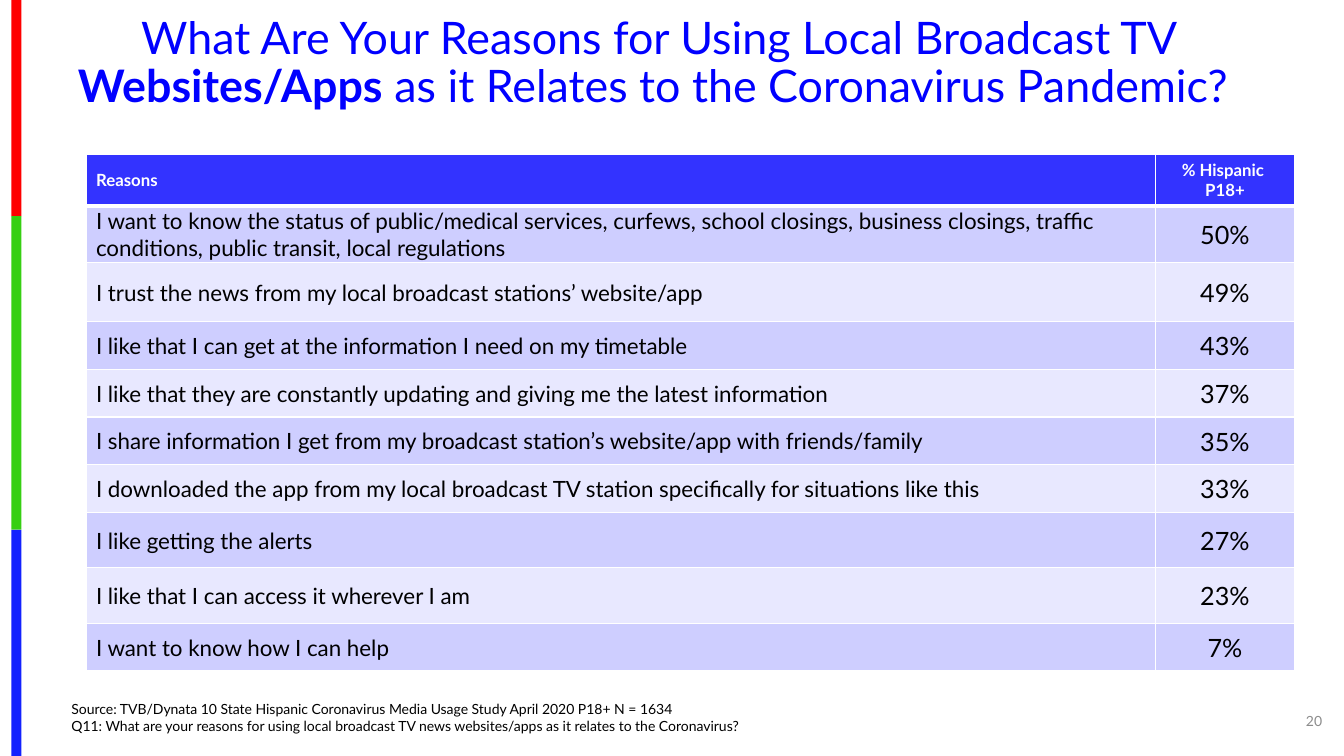
"""Build the slide on reasons for using local broadcast TV websites and apps."""
from itertools import accumulate

from lxml.etree import SubElement
from pptx import Presentation
from pptx.dml.color import RGBColor
from pptx.enum.shapes import MSO_SHAPE
from pptx.enum.text import MSO_ANCHOR, PP_ALIGN
from pptx.oxml.ns import qn
from pptx.util import Cm, Pt

TITLE = ("What Are Your Reasons for Using Local Broadcast TV **Websites/Apps**"
         " as it Relates to the Coronavirus Pandemic? ")
HEADS = ("Reasons", "% Hispanic \vP18+")
REASONS = [
    ("I want to know the status of public/medical services, curfews, school closings, "
     "business closings, traffic conditions, public transit, local regulations", "50%", 1.42),
    ("I trust the news from my local broadcast stations’ website/app", "49%", 1.5),
    ("I like that I can get at the information I need on my timetable", "43%", 1.2),
    ("I like that they are constantly updating and giving me the latest information", "37%", 1.2),
    ("I share information I get from my broadcast station’s website/app with friends/family",
     "35%", 1.2),
    ("I downloaded the app from my local broadcast TV station specifically for situations "
     "like this", "33%", 1.2),
    ("I like getting the alerts", "27%", 1.4),
    ("I like that I can access it wherever I am", "23%", 1.4),
    ("I want to know how I can help", "7%", 1.2),
]
SOURCE = ("Source: TVB/Dynata 10 State Hispanic Coronavirus Media Usage Study April 2020 "
          "P18+ N = 1634\n"
          "Q11: What are your reasons for using local broadcast TV news websites/apps as it "
          "relates to the Coronavirus?")
PAGE = "20"

RED = RGBColor(0xFE, 0x00, 0x00)
GREEN = RGBColor(0x36, 0xCF, 0x12)
BLUE = RGBColor(0x13, 0x22, 0xFE)
TITLE_BLUE = RGBColor(0x00, 0x00, 0xFF)
HEAD_BLUE = RGBColor(0x33, 0x33, 0xFF)
BANDS = (RGBColor(0xCE, 0xCE, 0xFF), RGBColor(0xE8, 0xE8, 0xFF))
BLACK = RGBColor(0x00, 0x00, 0x00)
WHITE = RGBColor(0xFF, 0xFF, 0xFF)
GRAY = RGBColor(0x8C, 0x8C, 0x8C)

BARS = [(5.45, RED), (7.9, GREEN), (5.7, BLUE)]
HEAD_TALL = 1.3
COLS = (26.95, 3.5)


def write(frame, text, size=16, color=BLACK, bold=False, align=PP_ALIGN.LEFT, space=None):
    """Fill a text frame; words between double stars are bold."""
    for i, line in enumerate(text.split("\n")):
        para = frame.add_paragraph() if i else frame.paragraphs[0]
        para.alignment = align
        para.line_spacing = space
        first, *rest = line.split("**")
        para.text = first
        for part in rest:
            para.add_run().text = part
        for j, run in enumerate(para.runs):
            font = run.font
            font.name, font.size = "Lato", Pt(size)
            font.color.rgb = color
            font.bold = bold or (bool(rest) and j == 1)


def add_box(slide, text, left, top, wide, tall, anchor, **style):
    frame = slide.shapes.add_textbox(Cm(left), Cm(top), Cm(wide), Cm(tall)).text_frame
    frame.word_wrap = True
    frame.vertical_anchor = anchor
    write(frame, text, **style)


def set_edges(cell, top, base):
    props = cell._tc.get_or_add_tcPr()
    for side, width in (("L", 1), ("R", 1), ("T", top), ("B", base)):
        edge = SubElement(props, qn("a:ln" + side), w=str(Pt(width)))
        SubElement(SubElement(edge, qn("a:solidFill")), qn("a:srgbClr"), val=str(WHITE))


def add_bars(slide):
    ends = accumulate(tall for tall, _ in BARS)
    for end, (tall, color) in zip(ends, BARS):
        bar = slide.shapes.add_shape(
            MSO_SHAPE.RECTANGLE, Cm(0.29), Cm(end - tall), Cm(0.25), Cm(tall))
        bar.shadow.inherit = False
        bar.fill.solid()
        bar.fill.fore_color.rgb = color
        bar.line.fill.background()


def add_grid(slide):
    rows = [(*HEADS, HEAD_TALL), *REASONS]
    total = sum(row[-1] for row in rows)
    grid = slide.shapes.add_table(
        len(rows), len(COLS), Cm(2.17), Cm(3.89), Cm(sum(COLS)), Cm(total)).table
    for col, wide in zip(grid.columns, COLS):
        col.width = Cm(wide)
    for r, (*texts, tall) in enumerate(rows):
        grid.rows[r].height = Cm(tall)
        for c, text in enumerate(texts):
            cell = grid.cell(r, c)
            set_edges(cell, 3 if r == 1 else 1, 1 if r else 3)
            cell.fill.solid()
            cell.fill.fore_color.rgb = BANDS[(r - 1) % 2] if r else HEAD_BLUE
            cell.vertical_anchor = MSO_ANCHOR.MIDDLE
            align = PP_ALIGN.CENTER if c else PP_ALIGN.LEFT
            if r:
                cell.margin_left = Cm(0.02 if c else 0.25)
                cell.margin_right = cell.margin_top = Cm(0.02)
                cell.margin_bottom = 0
                write(cell.text_frame, text, size=18 if c else 16, align=align)
            else:
                write(cell.text_frame, text, size=12, color=WHITE, bold=True, align=align)


def main():
    deck = Presentation()
    deck.slide_width, deck.slide_height = Cm(33.87), Cm(19.05)
    slide = deck.slides.add_slide(deck.slide_layouts[6])
    add_bars(slide)
    add_box(slide, TITLE, 0.41, 0.25, 32.39, 2.72, MSO_ANCHOR.MIDDLE,
            size=32, color=TITLE_BLUE, align=PP_ALIGN.CENTER, space=0.9)
    add_grid(slide)
    add_box(slide, SOURCE, 1.55, 17.93, 24, 0.69, MSO_ANCHOR.BOTTOM, size=10)
    add_box(slide, PAGE, 32.05, 17.65, 1.52, 1.02, MSO_ANCHOR.MIDDLE,
            size=10, color=GRAY, align=PP_ALIGN.RIGHT)
    deck.save("out.pptx")


if __name__ == "__main__":
    main()
